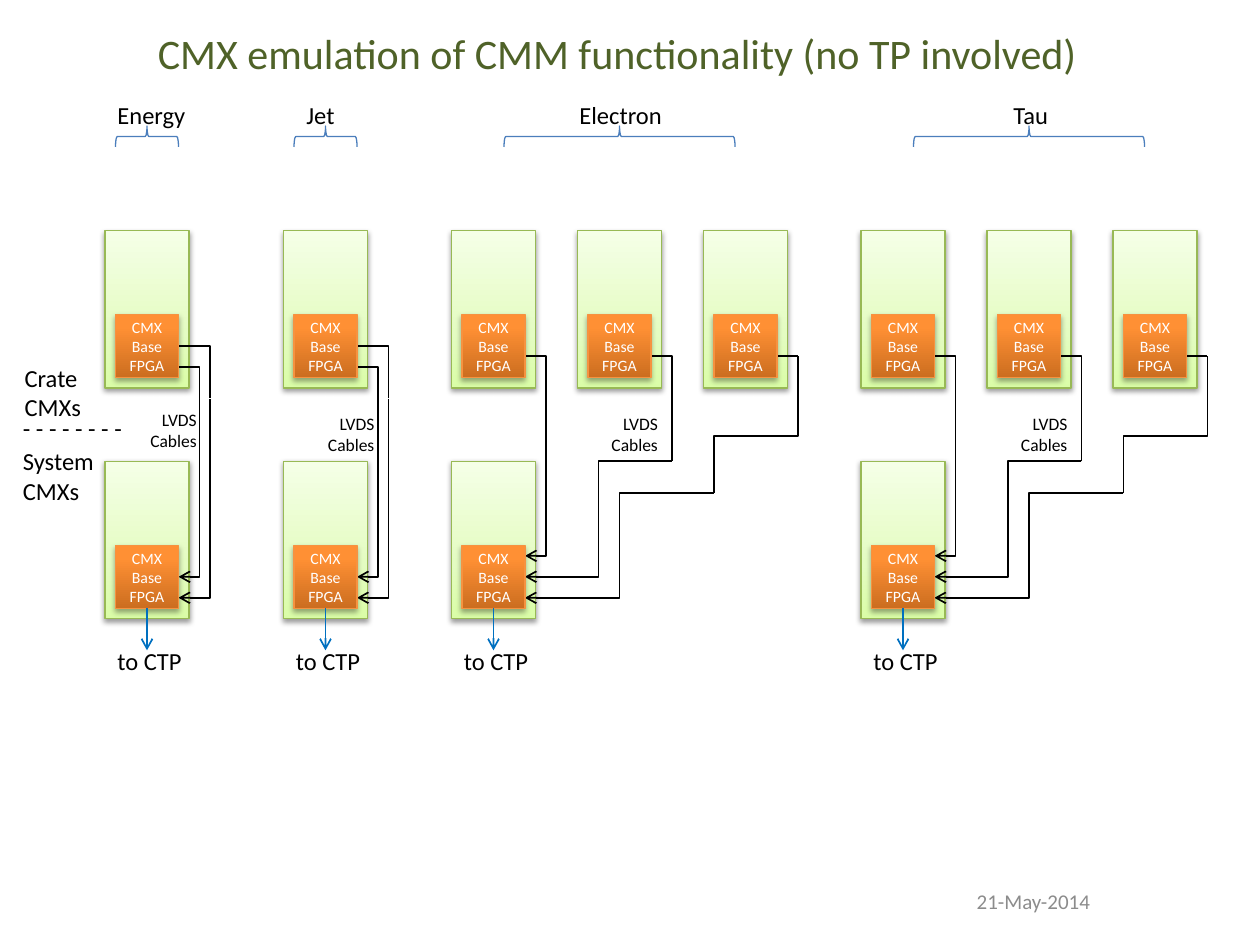
from dataclasses import dataclass
from typing import NamedTuple

from lxml.etree import SubElement as Sub
from pptx import Presentation
from pptx.dml.color import RGBColor as RGB
from pptx.enum.shapes import MSO_CONNECTOR as Conn, MSO_SHAPE as Geom
from pptx.enum.text import MSO_ANCHOR as Anchor, MSO_AUTO_SIZE as Auto, PP_ALIGN as Align
from pptx.oxml.ns import qn
from pptx.util import Pt

FONT = "Calibri"
BLACK = RGB(0x00, 0x00, 0x00)
WHITE = RGB(0xFF, 0xFF, 0xFF)
BLUE = RGB(0x00, 0x70, 0xC0)
BRACE = RGB(0x4B, 0x7E, 0xBC)
OLIVE = RGB(0x4F, 0x62, 0x28)
GRAY = RGB(0x8C, 0x8C, 0x8C)
CRATE_Y, SYSTEM_Y = 131.75, 263.6
CARD_W, CARD_H, CHIP, PITCH = 48, 90, 36, 72


@dataclass(frozen=True)
class Style:
    stops: tuple
    edge: RGB
    alpha: int
    dist: float


class Group(NamedTuple):
    name: str
    x: float
    count: int
    name_x: float
    name_w: float
    cable_x: float
    cable_y: float


class Wire(NamedTuple):
    x0: float
    y0: float
    x1: float
    y1: float
    kind: str
    adj: float = 1


CARD = Style(((0, "DAFDA7"), (35, "E4FCC2"), (100, "F5FFE7")), RGB(0x98, 0xB9, 0x55), 38, 1.6)
FPGA = Style(((0, "CC6E20"), (80, "FF9034"), (100, "FF9136")), RGB(0xF6, 0x92, 0x40), 35, 1.8)

GROUPS = [
    Group("Energy", 60, 1, 60, 54, 78.5, 230.4),
    Group("Jet", 162, 1, 168, 31, 180, 232.6),
    Group("Electron", 258, 3, 324, 62, 342, 232.6),
    Group("Tau", 492, 3, 572, 34.5, 576, 232.6),
]

SINGLE = [
    Wire(54, 221.75, 42, 329.6, "hook"),
    Wire(60, 227.75, 42, 341.6, "hook"),
    Wire(60, 227.75, 42, 197.75, "rise"),
    Wire(54, 221.75, 42, 209.75, "rise"),
]
TRIPLE = [
    Wire(54, 209.75, 42, 317.6, "hook"),
    Wire(126, 263.6, 42, 329.6, "step"),
    Wire(150, 281.6, 42, 341.6, "step"),
    Wire(126, 263.6, 114, 203.6, "rise"),
    Wire(150, 281.6, 198, 203.6, "rise", 0.416),
    Wire(198, 203.6, 186, 203.6, "line"),
    Wire(54, 215.75, 42, 203.6, "rise"),
]


def fill_text(frame, lines: list[str], size: float, color: RGB, align=None) -> None:
    for i, line in enumerate(lines):
        para = frame.paragraphs[0] if i == 0 else frame.add_paragraph()
        para.text = line
        para.alignment = align
        para.font.name, para.font.size = FONT, Pt(size)
        para.font.color.rgb = color


def label(slide, text: str, x: float, y: float, w: float, h: float,
          size: float = 14, color: RGB = BLACK, align=None):
    frame = slide.shapes.add_textbox(Pt(x), Pt(y), Pt(w), Pt(h)).text_frame
    frame.word_wrap = False
    frame.auto_size = Auto.SHAPE_TO_FIT_TEXT
    fill_text(frame, text.split("\n"), size, color, align)
    return frame


def block(slide, x: float, y: float, w: float, h: float, style: Style):
    box = slide.shapes.add_shape(Geom.RECTANGLE, Pt(x), Pt(y), Pt(w), Pt(h))
    box.line.color.rgb, box.line.width = style.edge, Pt(0.75)
    box.fill.gradient()
    box.fill.gradient_angle = 90
    props = box._element.spPr
    stops = props.find(qn("a:gradFill")).find(qn("a:gsLst"))
    for old in list(stops):
        stops.remove(old)
    for pos, tint in style.stops:
        stop = Sub(stops, qn("a:gs"), pos=str(pos * 1000))
        Sub(stop, qn("a:srgbClr"), val=tint)
    box.shadow.inherit = False
    glow = Sub(props.find(qn("a:effectLst")), qn("a:outerShdw"), blurRad=str(Pt(3.1)),
               dist=str(Pt(style.dist)), dir="5400000", rotWithShape="0")
    tone = Sub(glow, qn("a:srgbClr"), val="000000")
    Sub(tone, qn("a:alpha"), val=str(style.alpha * 1000))
    return box


def chip(slide, x: float, y: float):
    box = block(slide, x + 6, y + 48, CHIP, CHIP, FPGA)
    box.text_frame.vertical_anchor = Anchor.MIDDLE
    fill_text(box.text_frame, ["CMX", "Base", "FPGA"], 9, WHITE, Align.CENTER)
    return box


def link(slide, kind, x0: float, y0: float, x1: float, y1: float,
         color: RGB, arrow: bool):
    line = slide.shapes.add_connector(kind, Pt(x0), Pt(y0), Pt(x1), Pt(y1))
    line.line.color.rgb, line.line.width = color, Pt(1)
    if arrow:
        Sub(line.line._get_or_add_ln(), qn("a:tailEnd"), type="arrow")
    Sub(line._element.spPr, qn("a:effectLst"))
    return line


def turn(line, wire: Wire) -> None:
    long, wide = abs(wire.y1 - wire.y0), abs(wire.x1 - wire.x0)
    line.left = Pt((wire.x0 + wire.x1 - long) / 2)
    line.top = Pt((wire.y0 + wire.y1 - wide) / 2)
    line.width, line.height = Pt(long), Pt(wide)
    down, right = wire.y1 > wire.y0, wire.x1 > wire.x0
    frame = line._element.spPr.xfrm
    frame.set("rot", "5400000" if down else "16200000")
    frame.set("flipH", "0")
    frame.set("flipV", "1" if down == right else "0")


def draw_wire(slide, wire: Wire) -> None:
    kind = Conn.STRAIGHT if wire.kind == "line" else Conn.ELBOW
    line = link(slide, kind, *wire[:4], BLACK, wire.kind in ("hook", "step"))
    geom = line._element.spPr.find(qn("a:prstGeom"))
    if wire.kind in ("hook", "rise"):
        turn(line, wire)
    if wire.kind == "hook":
        geom.set("prst", "bentConnector2")
    if wire.kind == "rise":
        Sub(geom.find(qn("a:avLst")), qn("a:gd"), name="adj1",
            fmla=f"val {round(wire.adj * 100000)}")


def brace(slide, mid: float, span: float) -> None:
    mark = slide.shapes.add_shape(Geom.LEFT_BRACE, Pt(mid - 6), Pt(78 - span / 2), Pt(12), Pt(span))
    mark.rotation = 90
    mark.shadow.inherit = False
    mark.fill.background()
    mark.line.color.rgb, mark.line.width = BRACE, Pt(0.75)


def draw_group(slide, group: Group) -> None:
    x = group.x
    tops = [(x + i * PITCH, CRATE_Y) for i in range(group.count)]
    spots = tops + [(x, SYSTEM_Y)]
    for left, top in spots:
        block(slide, left, top, CARD_W, CARD_H, CARD)
    for wire in SINGLE if group.count == 1 else TRIPLE:
        draw_wire(slide, wire._replace(x0=x + wire.x0, x1=x + wire.x1))
    chips = [chip(slide, left, top) for left, top in spots]
    out = link(slide, Conn.STRAIGHT, x + 24, 347.6, x + 24, 371.6, BLUE, True)
    out.begin_connect(chips[-1], 2)
    label(slide, "to CTP", x, 365.75, 52, 24.25)
    label(slide, group.name, group.name_x, 53.5, group.name_w, 24.25)
    label(slide, "LVDS\nCables", group.cable_x, group.cable_y, 41, 31.5, 10, align=Align.RIGHT)
    reach = (group.count - 1) * PITCH
    brace(slide, x + 24 + reach / 2, 36 + reach * 2 / 3)


def main() -> None:
    deck = Presentation()
    deck.slide_width, deck.slide_height = Pt(720), Pt(540)
    slide = deck.slides.add_slide(deck.slide_layouts[6])
    for group in GROUPS:
        draw_group(slide, group)
    label(slide, "Crate\nCMXs", 7, 203.75, 47, 41)
    label(slide, "System\nCMXs", 6, 251.5, 55.5, 41)
    label(slide, "- - - - - - - -", 6, 232.6, 74, 24.25)
    label(slide, "CMX emulation of CMM functionality (no TP involved)",
          70.5, 12, 564.5, 36, 24, OLIVE, Align.CENTER)
    date = label(slide, "21-May-2014", 462, 500.5, 168, 28.75, 12, GRAY, Align.RIGHT)
    date.word_wrap, date.auto_size = True, Auto.NONE
    date.vertical_anchor = Anchor.MIDDLE
    deck.save("out.pptx")


if __name__ == "__main__":
    main()
